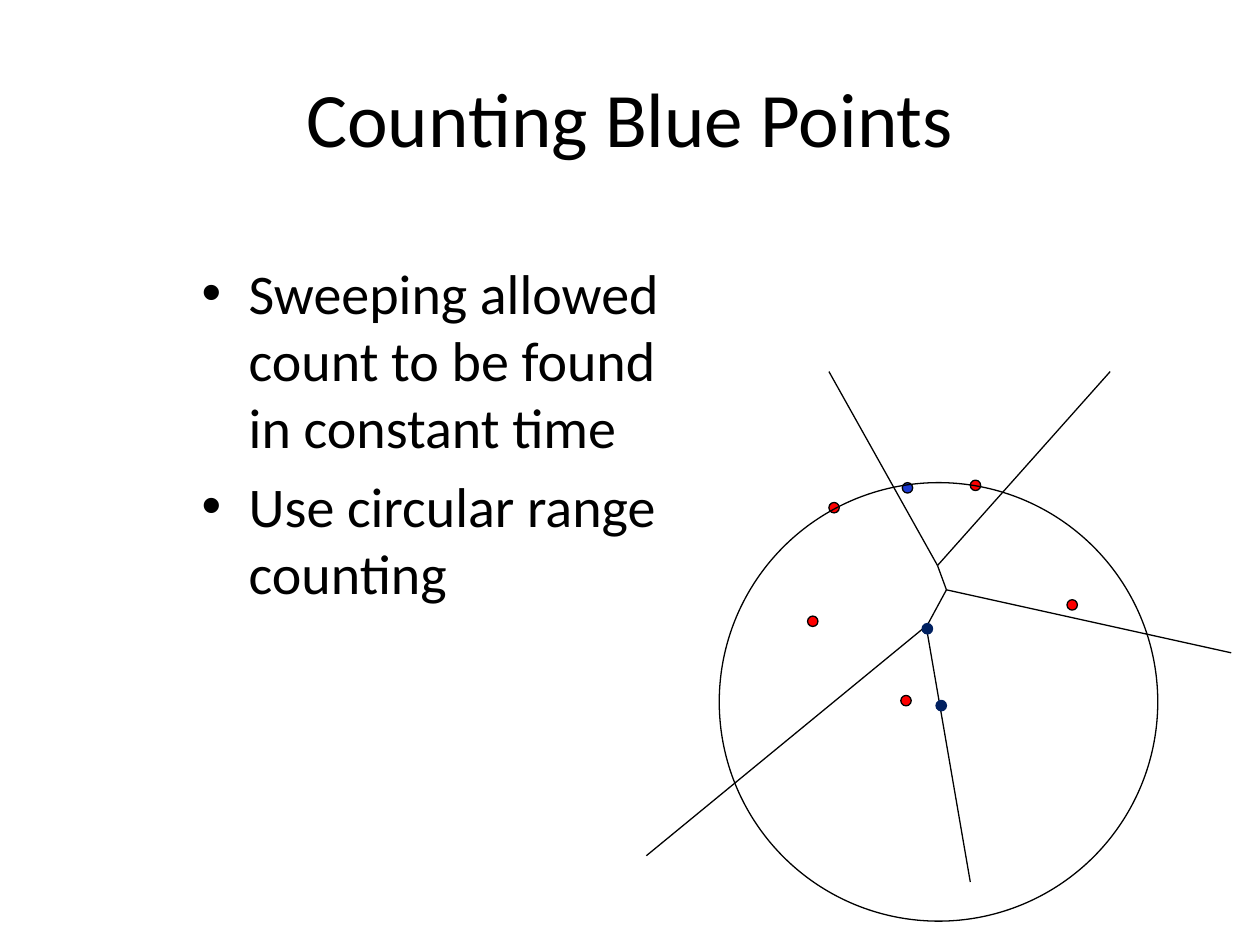
import pptx
import pptx.util
import pptx.dml.color
import pptx.enum.shapes
import pptx.enum.text
import pptx.oxml.ns
import lxml.etree

Cm, Pt = pptx.util.Cm, pptx.util.Pt
RGBColor = pptx.dml.color.RGBColor
BLACK = RGBColor(0x00, 0x00, 0x00)
RED = RGBColor(0xFF, 0x00, 0x00)
BLUE = RGBColor(0x1D, 0x3B, 0xD3)
NAVY = RGBColor(0x00, 0x20, 0x60)
DOT_SIZE = 0.21

deck = pptx.Presentation()
deck.slide_width, deck.slide_height = Cm(25.4), Cm(19.05)
page = deck.slides.add_slide(deck.slide_layouts[1])


def fill_placeholder(box, place, lines, size):
    box.left, box.top, box.width, box.height = [Cm(length) for length in place]
    box.text_frame.text = "\n".join(lines)
    for para in box.text_frame.paragraphs:
        para.font.name = "Calibri"
        para.font.size = Pt(size)
        para.font.color.rgb = BLACK


def add_circle(left, top, size, line_color, fill_color=None):
    circle = page.shapes.add_shape(
        pptx.enum.shapes.MSO_SHAPE.OVAL, Cm(left), Cm(top), Cm(size), Cm(size))
    circle.shadow.inherit = False
    circle.line.color.rgb = line_color
    circle.line.width = Pt(0.75)
    if fill_color is None:
        circle.fill.background()
    else:
        circle.fill.solid()
        circle.fill.fore_color.rgb = fill_color


# Title and list
title, body = page.placeholders
fill_placeholder(title, (1.27, 0.76, 22.86, 3.18), ["Counting Blue Points"], 44)
title.text_frame.paragraphs[0].alignment = pptx.enum.text.PP_ALIGN.CENTER
fill_placeholder(body, (3.81, 5.08, 10.69, 11.43), [
    "Sweeping allowed count to be found in constant time",
    "Use circular range counting",
], 32)
for para in body.text_frame.paragraphs:
    properties = para._p.get_or_add_pPr()
    properties.set("marL", str(Cm(0.95)))
    properties.set("indent", str(-Cm(0.95)))

# Voronoi edges
top_vertex = (18.9, 11.4)
right_vertex = (19.08, 11.89)
left_vertex = (18.67, 12.62)
edges = [
    ((16.71, 7.49), top_vertex),
    (top_vertex, (22.38, 7.49)),
    (left_vertex, (13.03, 17.25)),
    (left_vertex, (19.56, 17.78)),
    (right_vertex, (18.64, 12.7)),
    (right_vertex, (24.82, 13.16)),
    (right_vertex, top_vertex),
]
for start, end in edges:
    edge = page.shapes.add_connector(
        pptx.enum.shapes.MSO_CONNECTOR.STRAIGHT,
        *[Cm(length) for length in start + end])
    edge.line.color.rgb = BLACK
    edge.line.width = Pt(0.75)
    lxml.etree.SubElement(edge._element.spPr, pptx.oxml.ns.qn("a:effectLst"))

# Red and blue points
points = [
    (16.28, 12.42, BLACK, RED),
    (18.16, 14.02, BLACK, RED),
    (21.51, 12.09, BLACK, RED),
    (16.71, 10.13, BLACK, RED),
    (19.56, 9.68, BLACK, RED),
    (18.19, 9.73, BLACK, BLUE),
    (18.59, 12.57, NAVY, NAVY),
    (18.87, 14.12, NAVY, NAVY),
]
for left, top, line_color, fill_color in points:
    add_circle(left, top, DOT_SIZE, line_color, fill_color)

# Circular range
add_circle(14.5, 9.73, 8.84, BLACK)

deck.save("out.pptx")
